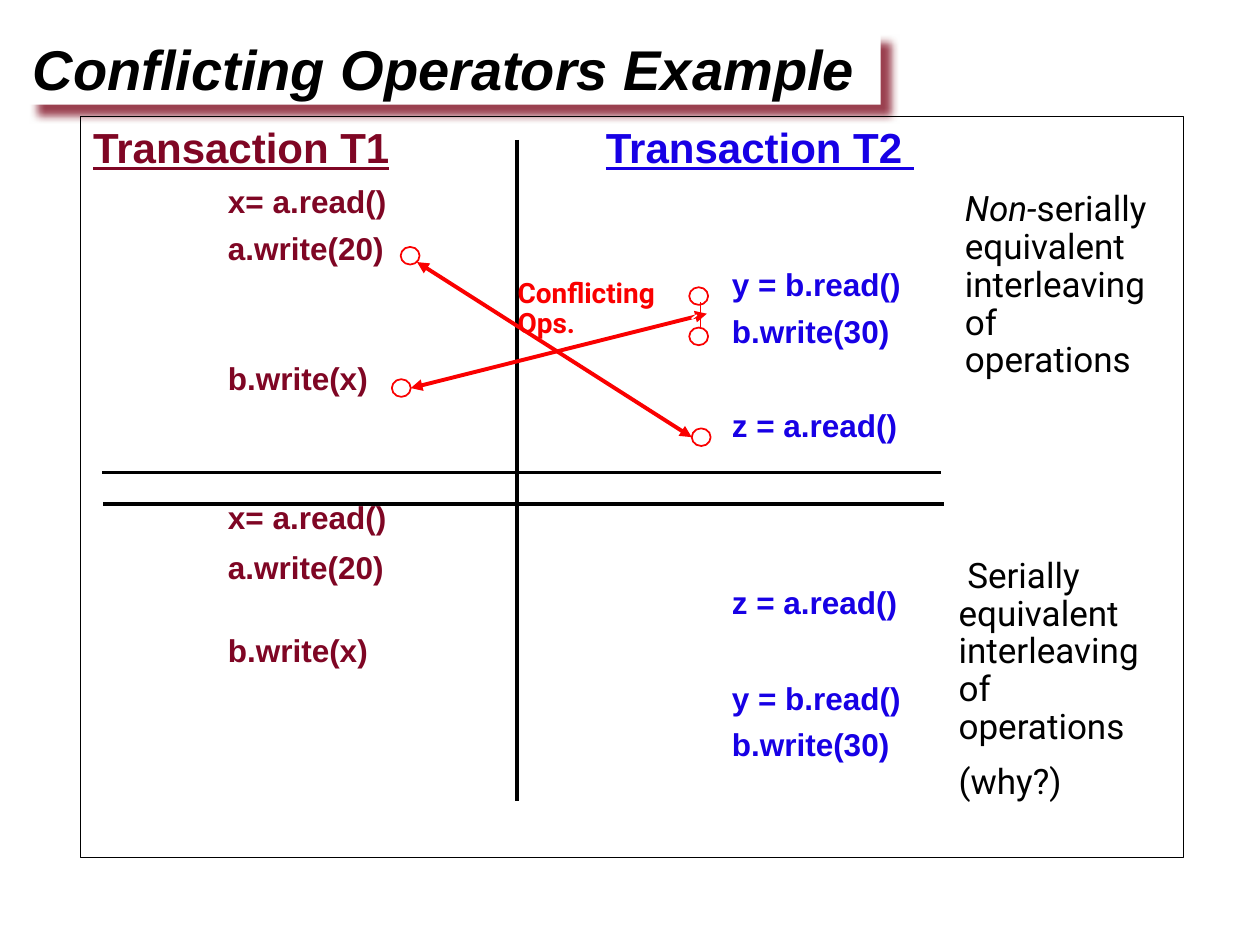
from lxml.etree import SubElement
from pptx import Presentation
from pptx.dml.color import RGBColor
from pptx.enum.shapes import MSO_CONNECTOR, MSO_SHAPE
from pptx.enum.text import MSO_ANCHOR as Anchor, PP_ALIGN as Align
from pptx.oxml.ns import qn
from pptx.util import Inches, Pt

COLORS = {
    "black": "000000",
    "white": "FFFFFF",
    "t1": "7F0624",
    "t2": "1700E5",
    "conflict": "FA0000",
    "shadow": "790015",
}

# Space above in inches, transaction, operation
OPERATIONS = [
    (0.10, "t1", "x= a.read()"),
    (0.09, "t1", "a.write(20)"),
    (0.01, "t2", "y = b.read()"),
    (0.10, "t2", "b.write(30)"),
    (0.09, "t1", "b.write(x)"),
    (0.10, "t2", "z = a.read()"),
    (0.45, "t1", "x= a.read()"),
    (0.12, "t1", "a.write(20)"),
    (0.00, "t2", "z = a.read()"),
    (0.10, "t1", "b.write(x)"),
    (0.10, "t2", "y = b.read()"),
    (0.09, "t2", "b.write(30)"),
]
OPERATION_TABS = {"t1": 1.07, "t2": 5.07}
HEADING_TABS = (2.72, 4.07)


def rgb(name):
    return RGBColor.from_string(COLORS[name])


class SlideBuilder:
    def __init__(self, slide):
        self.slide = slide
        self.shapes = slide.shapes

    def shape(self, kind, left, top, width, height, fill=None, line=None, weight=1):
        shape = self.shapes.add_shape(
            kind, Inches(left), Inches(top), Inches(width), Inches(height))
        shape.shadow.inherit = False
        if fill:
            shape.fill.solid()
            shape.fill.fore_color.rgb = rgb(fill)
        else:
            shape.fill.background()
        if line:
            shape.line.color.rgb = rgb(line)
            shape.line.width = Pt(weight)
        else:
            shape.line.fill.background()
        return shape

    def style(self, paragraph, size, color, font="Arial", bold=False):
        paragraph.alignment = Align.LEFT
        paragraph.font.name = font
        paragraph.font.size = Pt(size)
        paragraph.font.bold = bold
        paragraph.font.color.rgb = rgb(color)

    def tabs(self, paragraph, *stops):
        """Set left tab stops, in inches from the text edge."""
        tab_list = paragraph.font._element.getparent().makeelement(qn("a:tabLst"))
        for stop in stops:
            SubElement(tab_list, qn("a:tab"), pos=str(Inches(stop)), algn="l")
        paragraph.font._element.addprevious(tab_list)

    def title(self, text):
        banner = self.shape(MSO_SHAPE.RECTANGLE, 0.21, 0.25, 6.78, 0.58, "white")
        effects = banner._element.spPr.find(qn("a:effectLst"))
        shadow = SubElement(effects, qn("a:outerShdw"), blurRad=str(Pt(5)),
                            dist=str(Pt(8.5)), dir="2700000", algn="ctr",
                            rotWithShape="0")
        tint = SubElement(shadow, qn("a:srgbClr"), val=COLORS["shadow"])
        SubElement(tint, qn("a:alpha"), val="75000")
        frame = banner.text_frame
        frame.word_wrap = False
        frame.margin_left = frame.margin_right = Inches(0.05)
        frame.margin_top = frame.margin_bottom = Inches(0.02)
        heading = frame.paragraphs[0]
        heading.text = text
        self.style(heading, 32, "black", bold=True)
        heading.font.italic = True

    def schedule(self):
        """Framed text with both transactions set in tabbed columns."""
        body = self.shape(MSO_SHAPE.RECTANGLE, 0.64, 0.92, 8.75, 5.88,
                          line="black", weight=0.25)
        frame = body.text_frame
        frame.word_wrap = True
        frame.vertical_anchor = Anchor.TOP
        frame.margin_top = Inches(0.17)
        heading = frame.paragraphs[0]
        self.style(heading, 24, "t1", bold=True)
        self.tabs(heading, *HEADING_TABS)
        heading.line_spacing = Pt(20)
        for text, color, underline in (("Transaction T1\t", "t1", True),
                                       ("\t", "t2", False),
                                       ("Transaction T2 ", "t2", True)):
            run = heading.add_run()
            run.text = text
            run.font.underline = underline
            run.font.color.rgb = rgb(color)
        for gap, transaction, text in OPERATIONS:
            operation = frame.add_paragraph()
            operation.text = "\t" + text
            self.style(operation, 18, transaction, bold=True)
            self.tabs(operation, OPERATION_TABS[transaction])
            operation.line_spacing = Pt(20)
            operation.space_before = Inches(gap)

    def note(self, left, top, width, height, paragraphs, size=20, color="black",
             bold=False):
        """Each paragraph is a list of (text, italic) runs."""
        box = self.shapes.add_textbox(
            Inches(left), Inches(top), Inches(width), Inches(height))
        frame = box.text_frame
        frame.word_wrap = True
        for index, runs in enumerate(paragraphs):
            paragraph = frame.add_paragraph() if index else frame.paragraphs[0]
            self.style(paragraph, size, color, "Roboto", bold)
            paragraph.line_spacing = 0.9
            paragraph.space_before = Pt(size / 2) if index else Pt(0)
            for text, italic in runs:
                run = paragraph.add_run()
                run.text = text
                run.font.italic = italic

    def marker(self, left, top):
        self.shape(MSO_SHAPE.OVAL, left, top, 0.15, 0.14, "white", "conflict")

    def line(self, start, end, color="black", weight=2.25, arrows=False):
        line = self.shapes.add_connector(
            MSO_CONNECTOR.STRAIGHT, *(Inches(value) for value in start + end))
        line.line.color.rgb = rgb(color)
        line.line.width = Pt(weight)
        if arrows:
            for tag in ("a:headEnd", "a:tailEnd"):
                SubElement(line.line._get_or_add_ln(), qn(tag), type="triangle")
        SubElement(line._element.spPr, qn("a:effectLst"))


def main():
    deck = Presentation()
    deck.slide_width, deck.slide_height = Inches(10), Inches(7.5)
    page = SlideBuilder(deck.slides.add_slide(deck.slide_layouts[6]))

    page.title("Conflicting Operators Example")
    page.schedule()

    page.line((0.81, 3.75), (7.47, 3.75))
    page.line((4.1, 1.11), (4.1, 6.36))
    page.line((0.82, 4), (7.49, 4))

    page.note(7.51, 4.38, 1.64, 2.07, [
        [(" Serially equivalent interleaving of operations", False)],
        [("(why?)", False)]])
    page.note(4.01, 2.17, 1.4, 0.58, [[("Conflicting Ops.", False)]],
              size=16, color="conflict", bold=True)
    page.note(7.56, 1.47, 1.64, 1.9, [
        [("Non-", True),
         ("serially equivalent interleaving of operations", False)]])

    for left, top in ((5.49, 3.4), (3.18, 1.96), (5.47, 2.6), (3.11, 3.01),
                      (5.47, 2.28)):
        page.marker(left, top)
    page.line((3.31, 2.08), (5.49, 3.47), "conflict", arrows=True)
    page.line((5.61, 2.49), (3.26, 3.08), "conflict", arrows=True)
    page.line((5.56, 2.4), (5.56, 2.6), "conflict", 1)
    page.line((5.49, 2.53), (5.53, 2.5), "white", 1)

    deck.save("out.pptx")


if __name__ == "__main__":
    main()
